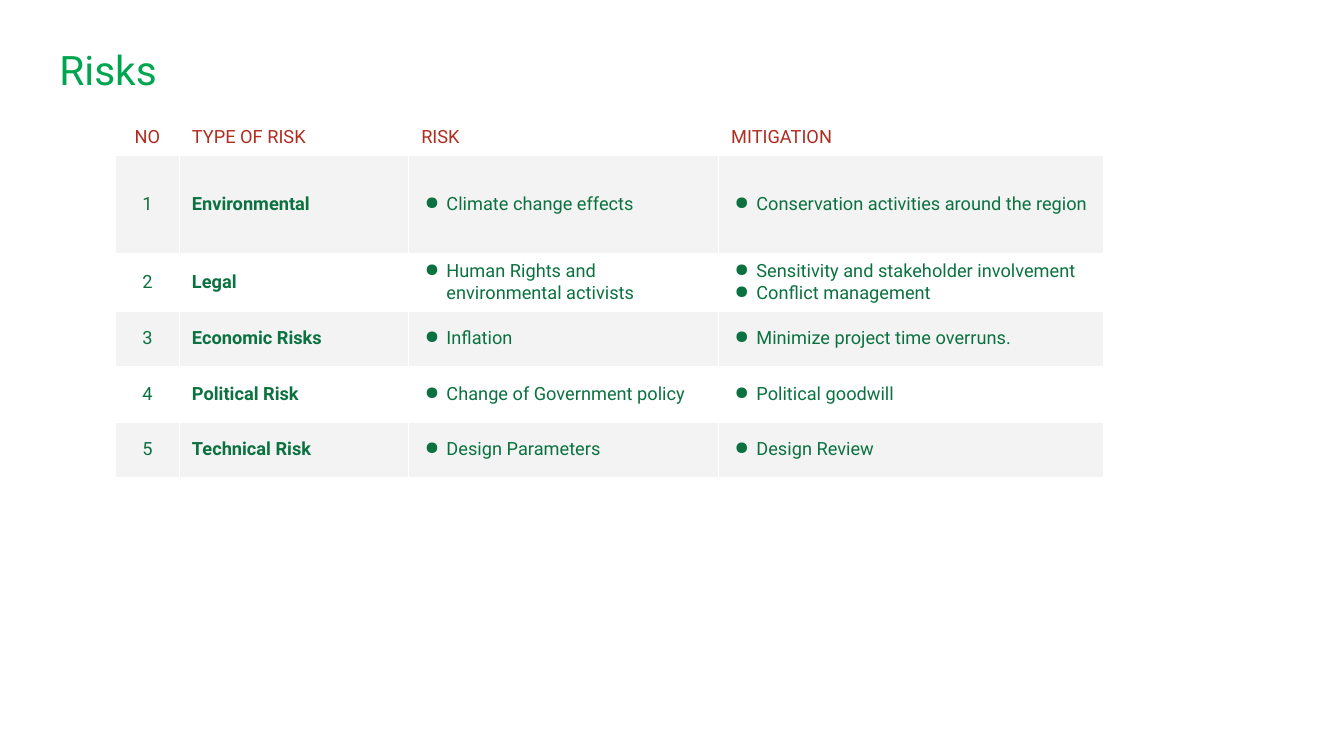
from lxml import etree
from pptx import Presentation
from pptx import util as u
from pptx.dml.color import RGBColor
from pptx.enum import text
from pptx.oxml import ns

FONT = "Roboto"
GREEN, RED, TITLE_GREEN = "0B7140", "B02C20", "00A54F"
WHITE, BAND = "FFFFFF", "F3F3F3"

HEADINGS = ["NO", "TYPE OF RISK", "RISK", "MITIGATION"]
RISKS = [
    ("Environmental", "Climate change effects", ["Conservation activities around the region"]),
    ("Legal", "Human Rights and environmental activists",
     ["Sensitivity and stakeholder involvement", "Conflict management"]),
    ("Economic Risks", "Inflation", ["Minimize project time overruns."]),
    ("Political Risk", "Change of Government policy", ["Political goodwill"]),
    ("Technical Risk", "Design Parameters", ["Design Review"]),
]
COLUMN_WIDTHS = [1.27, 4.55, 6.15, 7.63]
ROW_HEIGHTS = [0.71, 1.95, 1.14, 1.1, 1.1, 1.1]


def rgb(value):
    return RGBColor.from_string(value)


def set_all(target, values):
    for name, value in values.items():
        setattr(target, name, value)


def style(paragraph, size, color, bold=False):
    set_all(paragraph.font, {"name": FONT, "size": u.Pt(size), "bold": bold})
    paragraph.font.color.rgb = rgb(color)


def add_bullet(paragraph):
    properties = paragraph._p.get_or_add_pPr()
    properties.set("marL", str(u.Inches(0.5)))
    properties.set("indent", str(u.Inches(-0.43)))
    bullet_color = etree.SubElement(properties, ns.qn("a:buClr"))
    etree.SubElement(bullet_color, ns.qn("a:srgbClr"), val=GREEN)
    etree.SubElement(properties, ns.qn("a:buChar"), char="●")


def add_borders(cell, bottom):
    properties = cell._tc.get_or_add_tcPr()
    for side, width in {"L": 1, "R": 1, "T": 1, "B": bottom}.items():
        line = etree.SubElement(properties, ns.qn(f"a:ln{side}"), w=str(u.Pt(width)))
        fill = etree.SubElement(line, ns.qn("a:solidFill"))
        etree.SubElement(fill, ns.qn("a:srgbClr"), val=WHITE)


def fill_cell(cell, lines, column, is_header, background):
    add_borders(cell, 3 if is_header else 1)
    cell.fill.solid()
    cell.fill.fore_color.rgb = rgb(background)
    set_all(cell, {
        "vertical_anchor": text.MSO_ANCHOR.MIDDLE,
        "margin_left": u.Inches(0.25), "margin_right": u.Inches(0.25),
        "margin_top": u.Inches(0.1), "margin_bottom": u.Inches(0.1),
    })
    cell.text = "\n".join(lines)
    for paragraph in cell.text_frame.paragraphs:
        paragraph.alignment = text.PP_ALIGN.CENTER if column == 0 else text.PP_ALIGN.LEFT
        if column >= 2 and not is_header:
            add_bullet(paragraph)
        style(paragraph, 26, RED if is_header else GREEN, column == 1 and not is_header)


def add_title(slide, left, top, width, height):
    title = slide.shapes.add_textbox(*map(u.Inches, (left, top, width, height)))
    frame = title.text_frame
    margins = {f"margin_{side}": u.Inches(0.27) for side in ("left", "right", "top", "bottom")}
    set_all(frame, {"word_wrap": True, "text": "Risks", **margins})
    style(frame.paragraphs[0], 58, TITLE_GREEN)


def add_risk_table(slide, left, top):
    rows = [[[heading] for heading in HEADINGS]]
    for number, (kind, risk, mitigation) in enumerate(RISKS, 1):
        rows.append([[str(number)], [kind], [risk], mitigation])
    size = (left, top, sum(COLUMN_WIDTHS), sum(ROW_HEIGHTS))
    table = slide.shapes.add_table(len(rows), len(HEADINGS), *map(u.Inches, size)).table
    for column, width in zip(table.columns, COLUMN_WIDTHS):
        column.width = u.Inches(width)
    for row, height in zip(table.rows, ROW_HEIGHTS):
        row.height = u.Inches(height)
    for r, row in enumerate(rows):
        for c, lines in enumerate(row):
            fill_cell(table.cell(r, c), lines, c, r == 0, BAND if r % 2 else WHITE)


def main():
    deck = Presentation()
    set_all(deck, {"slide_width": u.Inches(26.67), "slide_height": u.Inches(15)})
    slide = deck.slides.add_slide(deck.slide_layouts[6])
    add_title(slide, 0.91, 0.63, 24.85, 1.67)
    add_risk_table(slide, 2.29, 2.37)
    deck.save("out.pptx")


if __name__ == "__main__":
    main()
